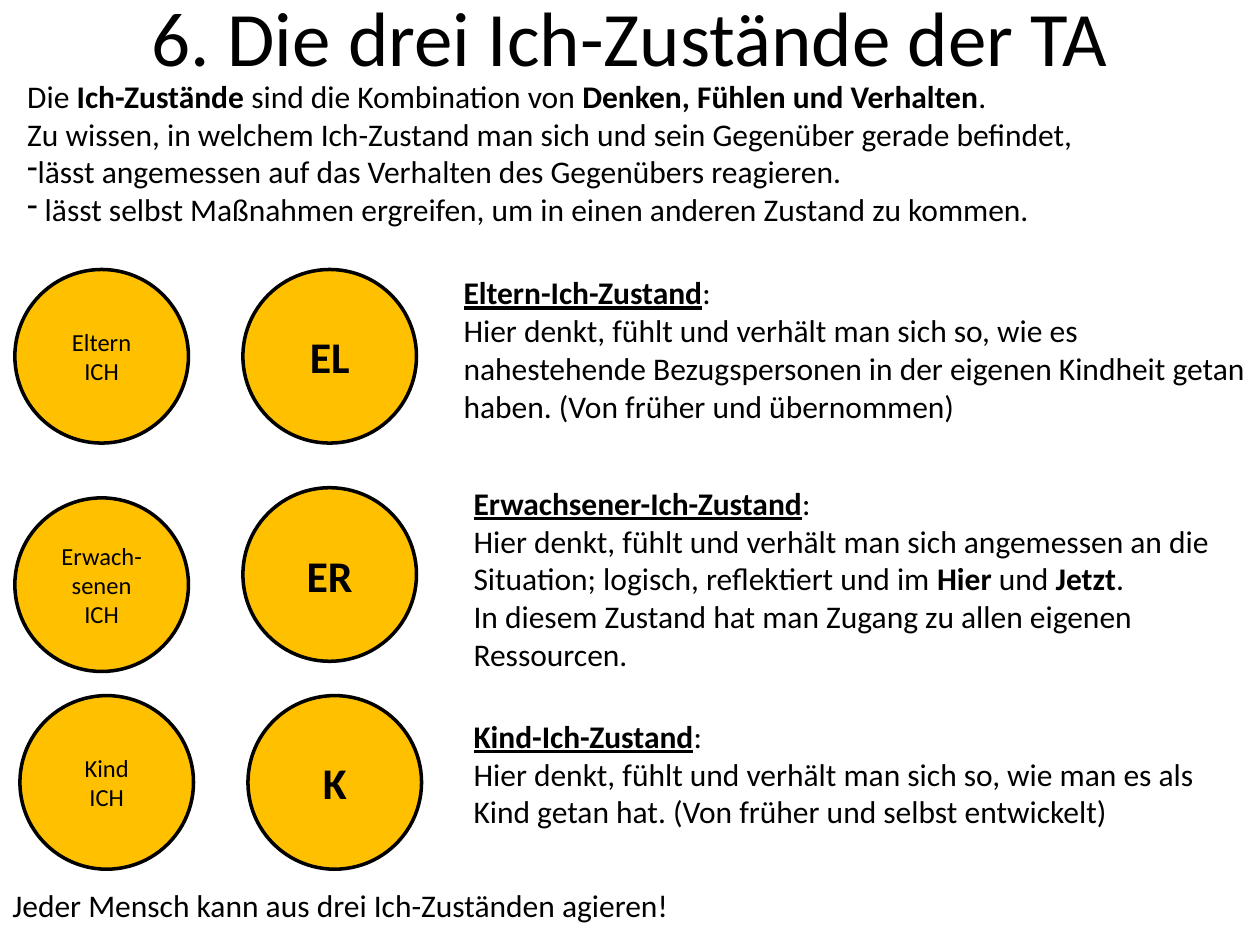
from dataclasses import dataclass

import pptx
import pptx.dml.color
import pptx.enum.shapes
import pptx.enum.text
import pptx.oxml.ns
import pptx.util
from lxml import etree

Pt = pptx.util.Pt
RGB = pptx.dml.color.RGBColor
ALIGN = pptx.enum.text.PP_ALIGN
ANCHOR = pptx.enum.text.MSO_ANCHOR


@dataclass(frozen=True)
class Theme:
    font: str = "Calibri"
    ink: RGB = RGB(0, 0, 0)
    circle: RGB = RGB(0xFF, 0xC0, 0x00)
    title: int = 44
    body: int = 18
    label: int = 14
    code: int = 25
    diameter: float = 99.2
    outline: int = 2


THEME = Theme()


def style_run(r, size, bold=False, underline=False):
    """Apply the theme font to a run."""
    r.font.name = THEME.font
    r.font.size = Pt(size)
    r.font.color.rgb = THEME.ink
    r.font.bold = bold
    r.font.underline = underline


def add_bullet(p, char):
    """Give a paragraph a bullet without indent."""
    pPr = p._p.get_or_add_pPr()
    pPr.set("marL", "0")
    pPr.set("indent", "0")
    etree.SubElement(pPr, pptx.oxml.ns.qn("a:buFontTx"))
    etree.SubElement(pPr, pptx.oxml.ns.qn("a:buChar")).set("char", char)


def set_title(s, text, left, top, width, height):
    """Place and format the title placeholder."""
    sp = s.shapes.title
    sp.left, sp.top, sp.width, sp.height = map(Pt, (left, top, width, height))
    tf = sp.text_frame
    tf.text = text
    tf.vertical_anchor = ANCHOR.MIDDLE
    p = tf.paragraphs[0]
    p.alignment = ALIGN.CENTER
    style_run(p.runs[0], THEME.title)


def add_text(s, left, top, width, height, paragraphs, bullets=()):
    """Add a text box whose paragraphs are lists of (text, styles) runs."""
    tf = s.shapes.add_textbox(*map(Pt, (left, top, width, height))).text_frame
    tf.word_wrap = True
    tf.auto_size = pptx.enum.text.MSO_AUTO_SIZE.SHAPE_TO_FIT_TEXT
    for i, runs in enumerate(paragraphs):
        p = tf.add_paragraph() if i else tf.paragraphs[0]
        if i in bullets:
            add_bullet(p, "-")
        for text, styles in runs:
            r = p.add_run()
            r.text = text
            style_run(r, THEME.body, "b" in styles, "u" in styles)


def add_circle(s, left, top, text, size, bold=False):
    """Add an outlined circle with centred text."""
    sp = s.shapes.add_shape(pptx.enum.shapes.MSO_SHAPE.OVAL, Pt(left), Pt(top),
                            Pt(THEME.diameter), Pt(THEME.diameter))
    sp.shadow.inherit = False
    sp.fill.solid()
    sp.fill.fore_color.rgb = THEME.circle
    sp.line.color.rgb = THEME.ink
    sp.line.width = Pt(THEME.outline)
    tf = sp.text_frame
    tf.word_wrap = True
    tf.vertical_anchor = ANCHOR.MIDDLE
    tf.text = text
    for p in tf.paragraphs:
        p.alignment = ALIGN.CENTER
        for r in p.runs:
            style_run(r, size, bold)


def add_state(s, left, tops, name, code):
    """Add the pair of circles for one ego state."""
    add_circle(s, left, tops[0], f"{name}\nICH", THEME.label)
    add_circle(s, left + 130.3, tops[1], code, THEME.code, bold=True)


def add_description(s, left, top, width, height, name, *paragraphs):
    """Add an underlined state heading with its explanation."""
    heading = [(f"{name}-Ich-Zustand", "bu"), (":", "")]
    add_text(s, left, top, width, height, [heading, *paragraphs])


def main():
    """Build the slide and save it."""
    prs = pptx.Presentation()
    prs.slide_width, prs.slide_height = Pt(720), Pt(540)
    s = prs.slides.add_slide(prs.slide_layouts[5])

    set_title(s, "6. Die drei Ich-Zustände der TA", 36, -24.5, 648, 90)
    add_text(s, 8.5, 40.3, 698, 116.6, [
        [("Die ", ""), ("Ich-Zustände ", "b"), ("sind die Kombination von ", ""),
         ("Denken, Fühlen und Verhalten", "b"), (".", "")],
        [("Zu wissen, in welchem Ich-Zustand man sich und sein Gegenüber gerade befindet,", "")],
        [("lässt angemessen auf das Verhalten des Gegenübers reagieren.", "")],
        [(" lässt selbst Maßnahmen ergreifen, um in einen anderen Zustand zu kommen.", "")],
    ], bullets=(2, 3))

    add_state(s, 8.5, (154, 154), "Eltern", "EL")
    add_state(s, 8.5, (284.5, 278.7), "Erwach-senen", "ER")
    add_state(s, 11.4, (397.5, 397.5), "Kind", "K")

    add_description(s, 257.8, 152.6, 465, 94.3, "Eltern", [
        ("Hier denkt, fühlt und verhält man sich so, wie es nahestehende Bezugspersonen "
         "in der eigenen Kindheit getan haben. (Von früher und übernommen)", "")])
    add_description(s, 263.5, 272.9, 442, 116.6, "Erwachsener", [
        ("Hier denkt, fühlt und verhält man sich angemessen an die Situation; "
         "logisch, reflektiert und im ", ""),
        ("Hier", "b"), (" und ", ""), ("Jetzt", "b"), (".", "")],
        [("In diesem Zustand hat man Zugang zu allen eigenen Ressourcen.", "")])
    add_description(s, 263.5, 406.1, 430.6, 72.7, "Kind", [
        ("Hier denkt, fühlt und verhält man sich so, wie man es als Kind getan hat. "
         "(Von früher und selbst entwickelt)", "")])

    add_text(s, 0, 502.6, 530, 28.8,
             [[("Jeder Mensch kann aus drei Ich-Zuständen agieren!", "")]])
    prs.save("out.pptx")


if __name__ == "__main__":
    main()
